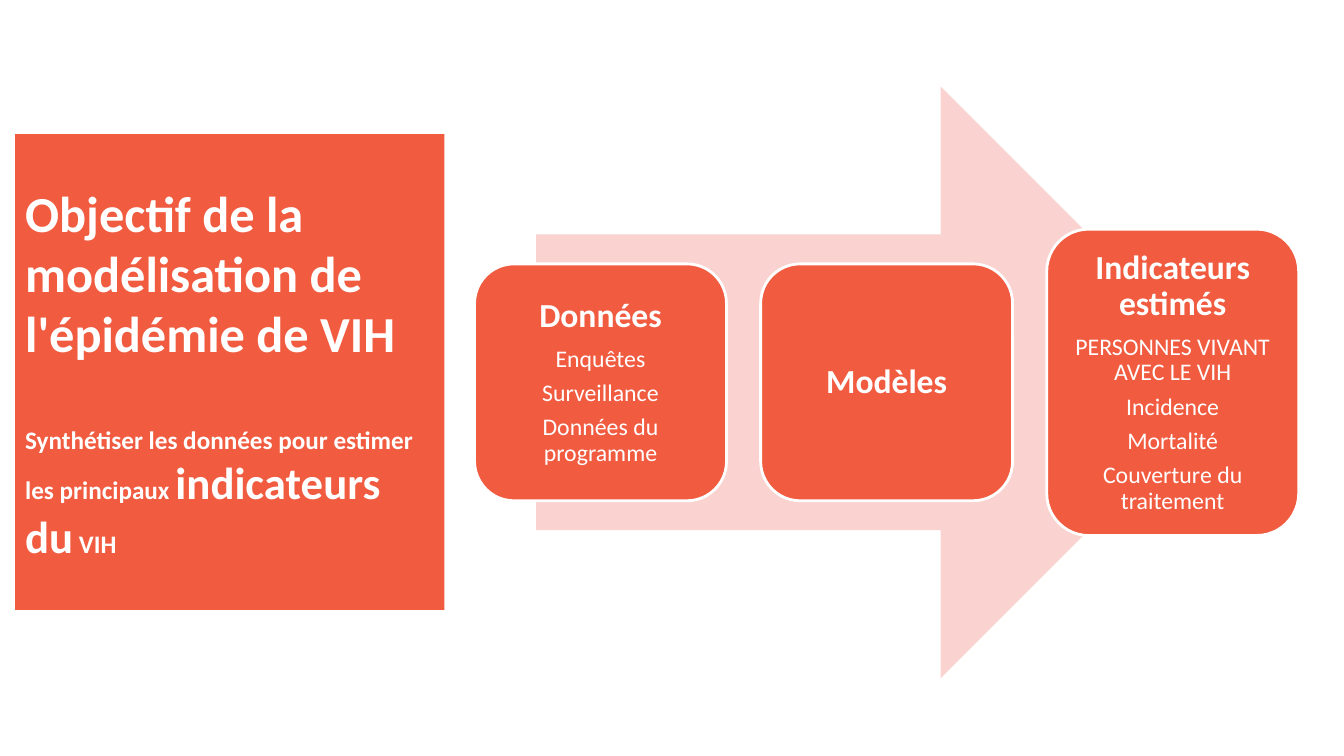
from pptx import Presentation
from pptx.dml.color import RGBColor
from pptx.enum.shapes import MSO_SHAPE
from pptx.enum.text import MSO_ANCHOR, MSO_AUTO_SIZE, PP_ALIGN
from pptx.util import Cm, Pt

COLORS = {"coral": "F15B40", "blush": "FAD2CF", "white": "FFFFFF"}
HEADING = {"size": Pt(24), "bold": True}
DETAIL = {"size": Pt(17), "bold": False}
FRAME = {"word_wrap": True, "auto_size": MSO_AUTO_SIZE.NONE,
         "vertical_anchor": MSO_ANCHOR.MIDDLE}

TITLE_LINES = [
    [("Objectif de la modélisation de l'épidémie de VIH", 36)],
    [("Synthétiser les données pour estimer les principaux ", 18),
     ("indicateurs du", 32), (" VIH", 18)],
]
# Heading, details, box height in cm
STAGES = [
    ("Données", ["Enquêtes", "Surveillance", "Données du programme"], 5.97),
    ("Modèles", [], 5.97),
    ("Indicateurs estimés",
     ["PERSONNES VIVANT AVEC LE VIH", "Incidence", "Mortalité",
      "Couverture du traitement"], 7.72),
]


def apply(target, values):
    for name, value in values.items():
        setattr(target, name, value)


def paint(shape, color):
    shape.fill.solid()
    shape.fill.fore_color.rgb = RGBColor.from_string(COLORS[color])


def add_text(paragraph, text, font_values):
    run = paragraph.add_run()
    run.text = text
    apply(run.font, {"name": "Calibri", **font_values})
    run.font.color.rgb = RGBColor.from_string(COLORS["white"])


def add_box(slide, preset, color, left, top, width, height):
    box = slide.shapes.add_shape(preset, Cm(left), Cm(top), Cm(width), Cm(height))
    box.shadow.inherit = False
    paint(box, color)
    box.line.fill.background()
    return box


def place_title(slide, left, top, width, height):
    title = slide.shapes.title
    apply(title, {"left": Cm(left), "top": Cm(top),
                  "width": Cm(width), "height": Cm(height)})
    paint(title, "coral")
    frame = title.text_frame
    apply(frame, FRAME)
    for index, pieces in enumerate(TITLE_LINES):
        paragraph = frame.add_paragraph() if index else frame.paragraphs[0]
        apply(paragraph, {"alignment": PP_ALIGN.LEFT,
                          "space_before": Pt(44 if index else 0)})
        for text, size in pieces:
            add_text(paragraph, text, {"size": Pt(size), "bold": True})


def add_stage(slide, heading, details, left, top, width, height):
    stage = add_box(slide, MSO_SHAPE.ROUNDED_RECTANGLE, "coral",
                    left, top, width, height)
    stage.line.color.rgb = RGBColor.from_string(COLORS["white"])
    stage.line.width = Pt(2)
    frame = stage.text_frame
    apply(frame, FRAME)
    apply(frame, {f"margin_{side}": Cm(0.25)
                  for side in ("left", "top", "right", "bottom")})
    for index, text in enumerate([heading, *details]):
        paragraph = frame.add_paragraph() if index else frame.paragraphs[0]
        font_values = DETAIL if index else HEADING
        apply(paragraph, {"alignment": PP_ALIGN.CENTER, "line_spacing": 0.9,
                          "space_after": Pt(6 if index else 8.4)})
        add_text(paragraph, text, font_values)


def add_process(slide, left, top, width, height):
    # Arrow behind the stages
    add_box(slide, MSO_SHAPE.RIGHT_ARROW, "blush",
            left + 1.55, top, 17.65, height)
    # Stages share the width, centred on the arrow's axis
    gap = 0.86
    stage_width = (width - gap * (len(STAGES) - 1)) / len(STAGES)
    for index, (heading, details, stage_height) in enumerate(STAGES):
        add_stage(slide, heading, details,
                  left + index * (stage_width + gap),
                  top + (height - stage_height) / 2, stage_width, stage_height)


def main():
    deck = Presentation()
    deck.slide_width, deck.slide_height = Cm(33.87), Cm(19.05)
    slide = deck.slides.add_slide(deck.slide_layouts[5])
    place_title(slide, 0.38, 3.38, 10.82, 11.99)
    add_process(slide, 11.96, 2.18, 20.77, 14.91)
    deck.save("out.pptx")


if __name__ == "__main__":
    main()
